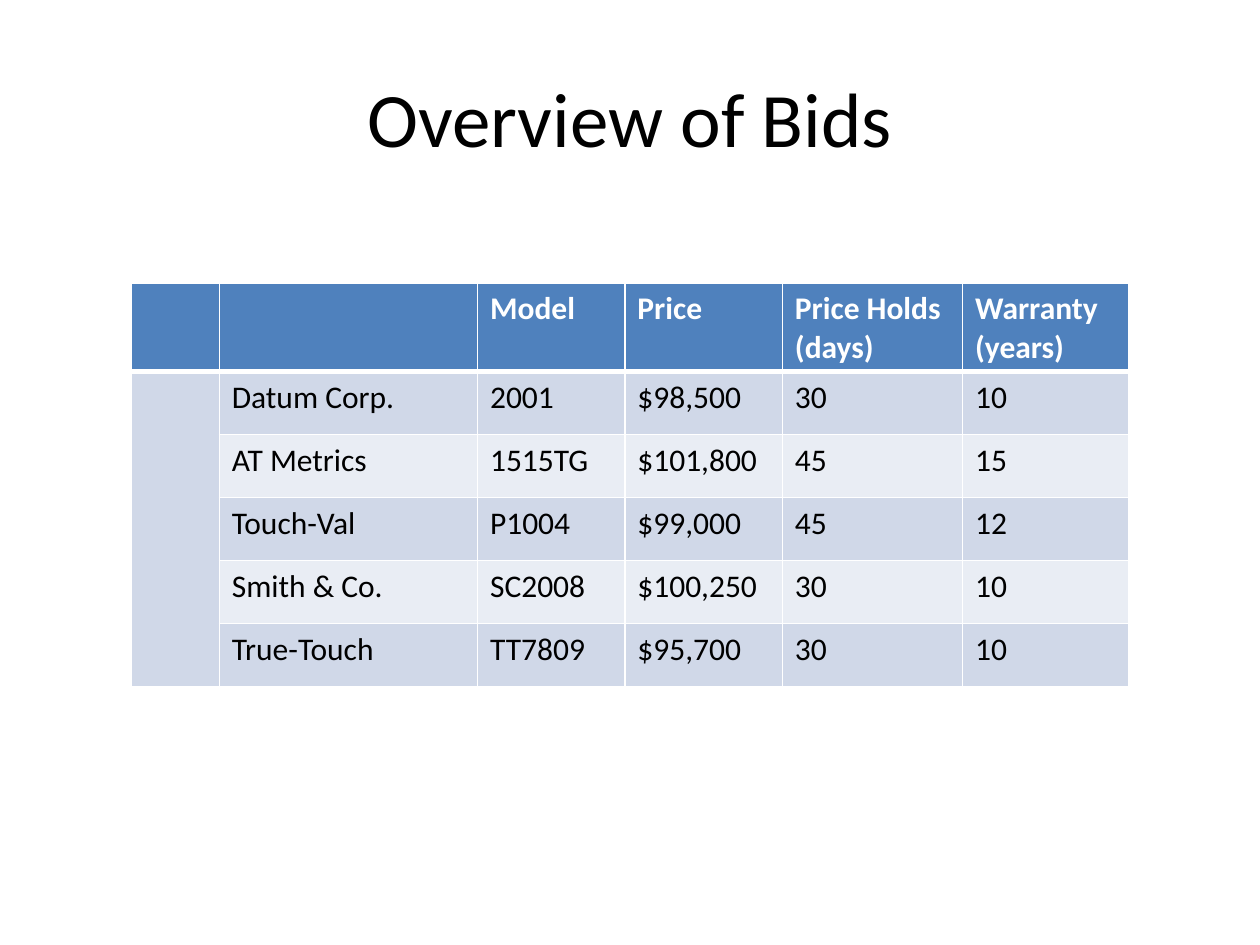
from lxml.etree import SubElement
from pptx import Presentation
from pptx.dml.color import RGBColor
from pptx.enum.text import MSO_ANCHOR as Anchor, PP_ALIGN as Align
from pptx.oxml.ns import qn
from pptx.util import Inches, Pt

FONT = "Calibri"
BLACK, WHITE, BLUE = "000000", "FFFFFF", "4F81BD"
BANDS = ("D0D8E8", "E9EDF4")
COL_WIDTHS = (0.7, 2.05, 1.17, 1.25, 1.43, 1.32)
HEADER_HEIGHT, ROW_HEIGHT = 0.7, 0.5
BIDS = [
    ("", "", "Model", "Price", "Price Holds (days)", "Warranty (years)"),
    ("", "Datum Corp.", "2001", "$98,500", "30", "10"),
    ("", "AT Metrics", "1515TG", "$101,800", "45", "15"),
    ("", "Touch-Val", "P1004", "$99,000", "45", "12"),
    ("", "Smith & Co.", "SC2008", "$100,250", "30", "10"),
    ("", "True-Touch", "TT7809", "$95,700", "30", "10"),
]


def rgb(color):
    return RGBColor.from_string(color)


def write(p, text, size, color, bold=False):
    r = p.add_run()
    r.text = text
    for name, value in {"name": FONT, "size": Pt(size), "bold": bold}.items():
        setattr(r.font, name, value)
    r.font.color.rgb = rgb(color)


def add_title(slide, text):
    s = slide.shapes.add_textbox(Inches(0.5), Inches(0.3), Inches(9), Inches(1.25))
    tf = s.text_frame
    tf.word_wrap = True
    tf.vertical_anchor = Anchor.MIDDLE
    p = tf.paragraphs[0]
    p.alignment = Align.CENTER
    write(p, text, 44, BLACK)


def set_borders(cell, widths):
    tc_pr = cell._tc.get_or_add_tcPr()
    for side, width in widths.items():
        ln = SubElement(tc_pr, qn(f"a:ln{side}"), w=str(Pt(width)))
        fill = SubElement(ln, qn("a:solidFill"))
        SubElement(fill, qn("a:srgbClr"), val=WHITE)


def add_table(slide, rows):
    heights = [HEADER_HEIGHT] + [ROW_HEIGHT] * (len(rows) - 1)
    table = slide.shapes.add_table(
        len(rows), len(COL_WIDTHS), Inches(1.04), Inches(2.25),
        Inches(sum(COL_WIDTHS)), Inches(sum(heights))).table
    for column, width in zip(table.columns, COL_WIDTHS):
        column.width = Inches(width)
    for row, height in zip(table.rows, heights):
        row.height = Inches(height)

    for i, values in enumerate(rows):
        header = i == 0
        for j, text in enumerate(values):
            cell = table.cell(i, j)
            # A thick rule separates the header from the bids
            set_borders(cell, {"L": 1, "R": 1, "T": 3 if i == 1 else 1,
                               "B": 3 if header else 1})
            cell.fill.solid()
            cell.fill.fore_color.rgb = rgb(BLUE if header else BANDS[(i - 1) % 2])
            if text:
                write(cell.text_frame.paragraphs[0], text, 18,
                      WHITE if header else BLACK, header)

    # One empty cell spans all the bids
    table.cell(1, 0).merge(table.cell(len(rows) - 1, 0))


def main():
    prs = Presentation()
    prs.slide_width, prs.slide_height = Inches(10), Inches(7.5)
    slide = prs.slides.add_slide(prs.slide_layouts[6])
    add_title(slide, "Overview of Bids")
    add_table(slide, BIDS)
    prs.save("out.pptx")


if __name__ == "__main__":
    main()
